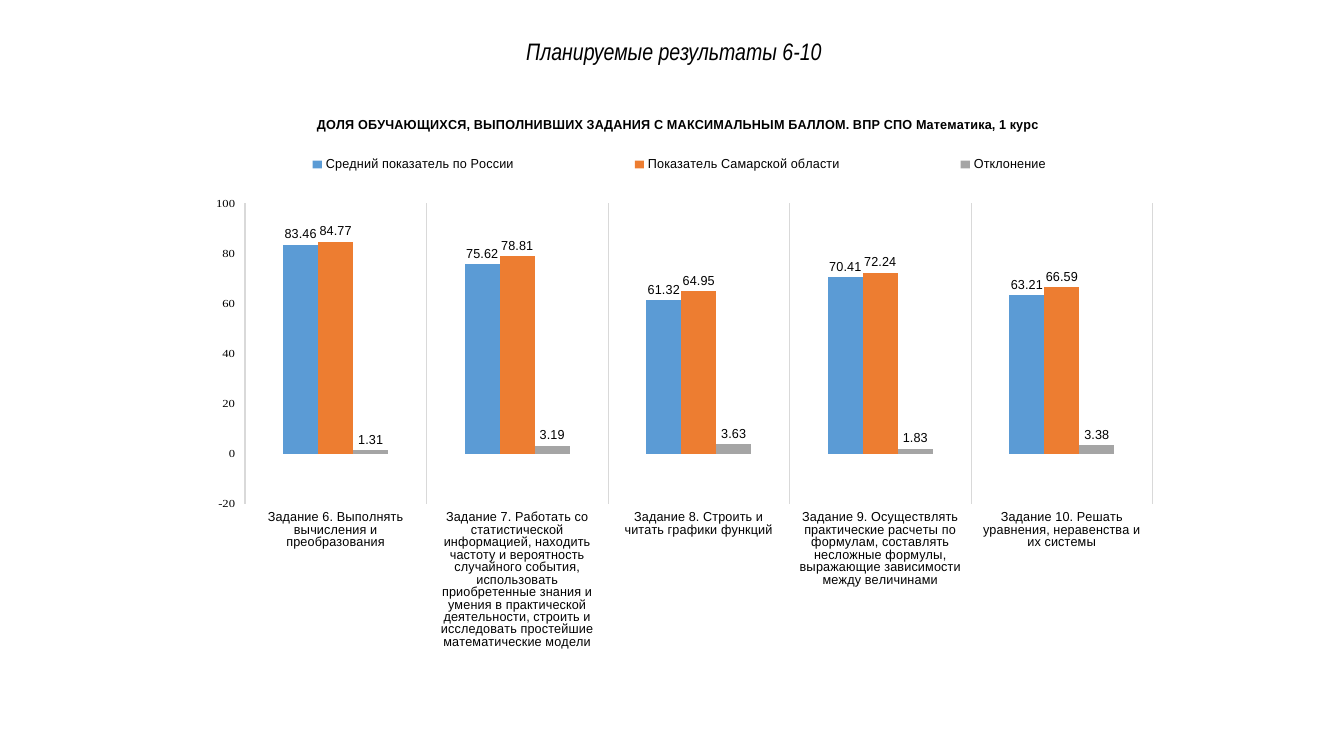
import dataclasses

import lxml.etree
import pptx
import pptx.chart.data
import pptx.dml.color
import pptx.enum.chart
import pptx.enum.text
import pptx.util

Inches = pptx.util.Inches


@dataclasses.dataclass(frozen=True)
class Theme:
    """Colours, fonts and type sizes of the slide."""
    ink: str = "000000"
    grid: str = "D9D9D9"
    bars: tuple = ("5B9BD5", "ED7D31", "A5A5A5")
    narrow: str = "Arial Narrow"
    serif: str = "Times New Roman"
    heading: int = 17
    label: int = 11
    base: int = 10
    scale: int = 9


THEME = Theme()
HEADING = "Планируемые результаты 6-10"
CHART_TITLE = ("ДОЛЯ ОБУЧАЮЩИХСЯ, ВЫПОЛНИВШИХ ЗАДАНИЯ С МАКСИМАЛЬНЫМ БАЛЛОМ. "
               "ВПР СПО Математика, 1 курс")
TASKS = (
    "Задание 6. Выполнять вычисления и преобразования",
    "Задание 7. Работать со статистической информацией, находить частоту и "
    "вероятность случайного события, использовать приобретенные знания и умения "
    "в практической деятельности, строить и исследовать простейшие "
    "математические модели",
    "Задание 8. Строить и читать графики функций",
    "Задание 9. Осуществлять практические расчеты по формулам, составлять "
    "несложные формулы, выражающие зависимости между величинами",
    "Задание 10. Решать уравнения, неравенства и их системы",
)
SERIES = {
    "Средний показатель по России": (83.46, 75.62, 61.32, 70.41, 63.21),
    "Показатель Самарской области": (84.77, 78.81, 64.95, 72.24, 66.59),
    "Отклонение": (1.31, 3.19, 3.63, 1.83, 3.38),
}


def rgb(value):
    """Return a colour from its hex value."""
    return pptx.dml.color.RGBColor.from_string(value)


def style_font(font, size, name, bold=False, italic=False):
    """Set the size, face and colour of a font."""
    font.size = pptx.util.Pt(size)
    font.name = name
    font.bold = bold
    font.italic = italic
    font.color.rgb = rgb(THEME.ink)


def set_layout(chart, tag, index, inner=False, **fractions):
    """Place a chart part by fractions of the chart area."""
    part = chart.element.xpath(f".//c:{tag}")[0]
    for old in part.xpath("./c:layout"):
        part.remove(old)
    ns = part.nsmap["c"]
    layout = lxml.etree.Element(f"{{{ns}}}layout")
    manual = lxml.etree.SubElement(layout, f"{{{ns}}}manualLayout")
    settings = {"layoutTarget": "inner"} if inner else {}
    settings.update(xMode="edge", yMode="edge", **fractions)
    for name, value in settings.items():
        lxml.etree.SubElement(manual, f"{{{ns}}}{name}").set("val", str(value))
    part.insert(index, layout)


def add_heading(slide, left, top, width, height):
    """Fill the title placeholder and fit it to the box."""
    sp = slide.shapes.title
    sp.left, sp.top, sp.width, sp.height = map(Inches, (left, top, width, height))
    tf = sp.text_frame
    tf.text = HEADING
    tf.word_wrap = True
    tf.vertical_anchor = pptx.enum.text.MSO_ANCHOR.MIDDLE
    p = tf.paragraphs[0]
    p.alignment = pptx.enum.text.PP_ALIGN.CENTER
    style_font(p.runs[0].font, THEME.heading, THEME.narrow, italic=True)


def format_axes(chart):
    """Format the task axis and the percentage axis."""
    tasks, scale = chart.category_axis, chart.value_axis
    tasks.tick_label_position = pptx.enum.chart.XL_TICK_LABEL_POSITION.LOW
    tasks.has_major_gridlines = True
    grid = tasks.major_gridlines.format.line
    grid.color.rgb = rgb(THEME.grid)
    grid.width = pptx.util.Pt(0.75)
    scale.has_major_gridlines = False
    scale.minimum_scale, scale.maximum_scale = -20, 100
    scale.major_unit = 20
    for axis in (tasks, scale):
        axis.format.line.fill.background()
    style_font(tasks.tick_labels.font, THEME.label, THEME.narrow)
    style_font(scale.tick_labels.font, THEME.scale, THEME.serif)


def format_bars(plot):
    """Colour the series and label their bars."""
    plot.gap_width = 219
    plot.overlap = 0
    plot.vary_by_categories = False
    for series, color in zip(plot.series, THEME.bars):
        series.format.fill.solid()
        series.format.fill.fore_color.rgb = rgb(color)
        labels = series.data_labels
        labels.show_value = True
        labels.position = pptx.enum.chart.XL_LABEL_POSITION.OUTSIDE_END
        style_font(labels.font, THEME.label, THEME.narrow)


def add_results_chart(slide, left, top, width, height):
    """Draw the clustered columns of task results in the box."""
    data = pptx.chart.data.CategoryChartData()
    data.categories = TASKS
    for name, values in SERIES.items():
        data.add_series(name, values)
    chart = slide.shapes.add_chart(
        pptx.enum.chart.XL_CHART_TYPE.COLUMN_CLUSTERED,
        *map(Inches, (left, top, width, height)), data).chart
    style_font(chart.font, THEME.base, THEME.serif)
    chart.has_title = True
    tf = chart.chart_title.text_frame
    tf.text = CHART_TITLE
    style_font(tf.paragraphs[0].runs[0].font, THEME.label, THEME.narrow, bold=True)
    chart.has_legend = True
    chart.legend.position = pptx.enum.chart.XL_LEGEND_POSITION.TOP
    chart.legend.include_in_layout = False
    style_font(chart.legend.font, THEME.label, THEME.narrow)
    format_axes(chart)
    format_bars(chart.plots[0])
    set_layout(chart, "title", 1, x=0.13, y=0.03)
    set_layout(chart, "legend", 1, x=0.01, y=0.11, w=0.99, h=0.05)
    set_layout(chart, "plotArea", 0, inner=True, x=0.059, y=0.219, w=0.932, h=0.646)


def main():
    """Build and save the slide."""
    prs = pptx.Presentation()
    prs.slide_width, prs.slide_height = Inches(13.33), Inches(7.5)
    slide = prs.slides.add_slide(prs.slide_layouts.get_by_name("Title Only"))
    add_heading(slide, 1.7, 0.31, 9.97, 0.39)
    add_results_chart(slide, 1.86, 1.01, 9.66, 5.43)
    prs.save("out.pptx")


if __name__ == "__main__":
    main()
